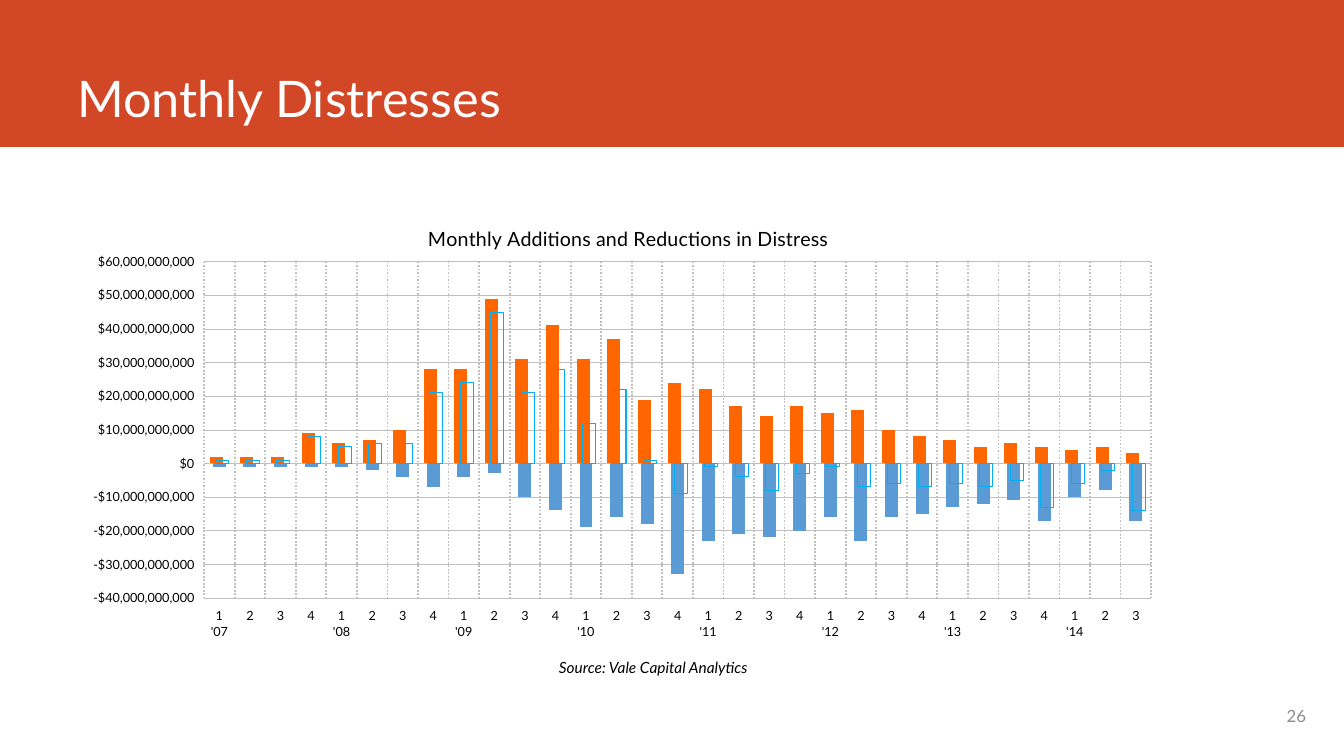
"""Build the Monthly Distresses slide with its clustered column chart."""
from lxml.etree import SubElement
from pptx import Presentation
from pptx.chart.data import CategoryChartData
from pptx.dml.color import RGBColor
from pptx.enum.chart import XL_CHART_TYPE, XL_TICK_LABEL_POSITION, XL_TICK_MARK
from pptx.enum.dml import MSO_LINE
from pptx.enum.shapes import MSO_SHAPE
from pptx.enum.text import MSO_ANCHOR, MSO_AUTO_SIZE, PP_ALIGN
from pptx.oxml.ns import qn
from pptx.util import Emu, Pt


def px(*lengths):
    return [Emu(round(n * 914400 / 100.8)) for n in lengths]


def write(tf, text, size, color="000000", italic=False, bold=False, align=None):
    p = tf.paragraphs[0]
    p.alignment = align
    r = p.add_run()
    r.text = text
    r.font.name = "Lato"
    r.font.size = Pt(size)
    r.font.italic = italic
    r.font.bold = bold
    r.font.color.rgb = RGBColor.from_string(color)


prs = Presentation()
prs.slide_width, prs.slide_height = px(1344, 756)
s = prs.slides.add_slide(prs.slide_layouts[5])

title = s.shapes.title
title.left, title.top, title.width, title.height = px(67, 0, 1185, 133)
tf = title.text_frame
tf.auto_size = MSO_AUTO_SIZE.NONE
tf.vertical_anchor = MSO_ANCHOR.BOTTOM
write(tf, "Monthly Distresses", 36, "FFFFFF", align=PP_ALIGN.LEFT)

band = s.shapes.add_shape(MSO_SHAPE.RECTANGLE, *px(0, 0, 1344, 147))
band.shadow.inherit = False
band.fill.solid()
band.fill.fore_color.rgb = RGBColor.from_string("D24726")
band.line.fill.background()
title._element.addprevious(band._element)

BILLION = 10**9
quarters = 31
additions = [2, 2, 2, 9, 6, 7, 10, 28, 28, 49, 31, 41, 31, 37, 19, 24,
             22, 17, 14, 17, 15, 16, 10, 8, 7, 5, 6, 5, 4, 5, 3]
reductions = [-1, -1, -1, -1, -1, -2, -4, -7, -4, -3, -10, -14, -19, -16, -18, -33,
              -23, -21, -22, -20, -16, -23, -16, -15, -13, -12, -11, -17, -10, -8, -17]
net = [1, 1, 1, 8, 5, 6, 6, 21, 24, 45, 21, 28, 12, 22, 1, -9,
       -1, -4, -8, -3, -1, -7, -6, -7, -6, -7, -5, -13, -6, -2, -14]

data = CategoryChartData()
for i in range(quarters):
    year, quarter = divmod(i, 4)
    data.add_category(f"{quarter + 1}" if quarter else f"1\n'{year + 7:02}")
for i, values in enumerate((additions, reductions, net), 1):
    data.add_series(f"Series {i}", [v * BILLION for v in values])

chart = s.shapes.add_chart(XL_CHART_TYPE.COLUMN_CLUSTERED, *px(93, 202, 1069, 466), data).chart
chart.has_legend = False
chart.font.name = "Arial"
chart.font.size = Pt(9)
chart.font.color.rgb = RGBColor.from_string("000000")
chart.has_title = True
write(chart.chart_title.text_frame, "Monthly Additions and Reductions in Distress", 14)
chart.chart_title.include_in_layout = False

plot = chart.plots[0]
plot.vary_by_categories = False
plot.gap_width = 90
plot.overlap = 77
for series, color in zip(plot.series, ("FF6600", "5B9BD5", None)):
    series.invert_if_negative = False
    if color:
        series.format.fill.solid()
        series.format.fill.fore_color.rgb = RGBColor.from_string(color)
    else:
        series.format.fill.background()
        series.format.line.color.rgb = RGBColor.from_string("00B0F0")
        series.format.line.width = Pt(0.75)

for axis, width in ((chart.category_axis, 1.25), (chart.value_axis, 0.25)):
    axis.has_major_gridlines = True
    grid = axis.major_gridlines.format.line
    grid.color.rgb = RGBColor.from_string("BFBFBF")
    grid.width = Pt(width)
    axis.major_tick_mark = XL_TICK_MARK.OUTSIDE
    axis.format.line.fill.background()
    axis.tick_labels.font.name = "Lato"
    axis.tick_labels.font.size = Pt(9)
    axis.tick_labels.font.color.rgb = RGBColor.from_string("000000")
chart.category_axis.major_gridlines.format.line.dash_style = MSO_LINE.ROUND_DOT
chart.category_axis.tick_label_position = XL_TICK_LABEL_POSITION.LOW
chart.value_axis.minimum_scale = -40 * BILLION
chart.value_axis.maximum_scale = 60 * BILLION
chart.value_axis.major_unit = 10 * BILLION
chart.value_axis.tick_labels.number_format = r"\$#,##0"
chart.value_axis.tick_labels.number_format_is_linked = False

title_layout = dict(xMode="edge", yMode="edge", x=0.31, y=0.04)
plot_layout = dict(layoutTarget="inner", xMode="edge", yMode="edge", x=0.104, y=0.128, w=0.886, h=0.722)
plot_area = chart._chartSpace.chart.plotArea
for parent, index, settings in ((chart.chart_title._element, 1, title_layout), (plot_area, 0, plot_layout)):
    for old in parent.findall(qn("c:layout")):
        parent.remove(old)
    layout = SubElement(parent, qn("c:layout"))
    parent.insert(index, layout)
    manual = SubElement(layout, qn("c:manualLayout"))
    for name, value in settings.items():
        SubElement(manual, qn(f"c:{name}")).set("val", str(value))

tf = s.shapes.add_textbox(*px(549, 653, 219, 29)).text_frame
tf.word_wrap = False
tf.auto_size = MSO_AUTO_SIZE.SHAPE_TO_FIT_TEXT
write(tf, "Source: Vale Capital Analytics", 11, italic=True)

tf = s.shapes.add_textbox(*px(955, 696, 361, 40)).text_frame
tf.word_wrap = True
tf.vertical_anchor = MSO_ANCHOR.MIDDLE
write(tf, "26", 12, "8C8C8C", align=PP_ALIGN.RIGHT)

prs.save("out.pptx")
